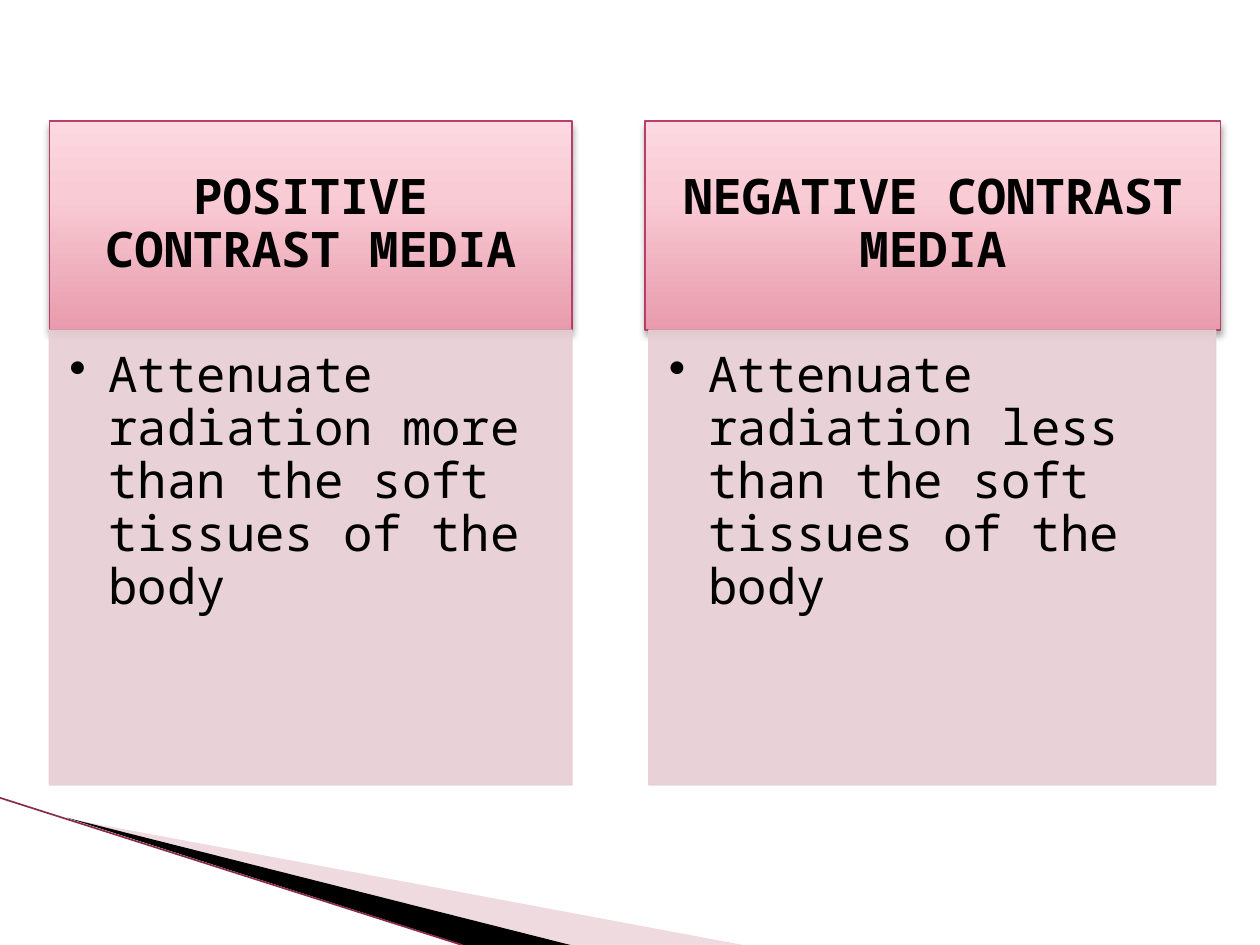
from dataclasses import dataclass

from lxml.etree import SubElement
from pptx import Presentation
from pptx.dml.color import RGBColor
from pptx.enum.shapes import MSO_CONNECTOR as Connector, MSO_SHAPE as Preset
from pptx.enum.text import MSO_ANCHOR as Anchor, PP_ALIGN as Align
from pptx.oxml import parse_xml
from pptx.oxml.ns import nsdecls, qn
from pptx.util import Pt


@dataclass(frozen=True)
class Theme:
    font: str = "Noto Sans Mono"
    text_size: float = 28
    line_spacing: float = 0.9
    bullet_indent: float = 22.5
    ink: str = "000000"
    header_line: str = "B83D68"
    header_stops: tuple = ((0, "E89BAD"), (65, "F9CCD5"), (100, "FDD8E0"))
    body: str = "E6CED4"
    body_opacity: int = 90
    pale_wedge: str = "D8A3AF"
    pale_opacity: int = 40
    edge: str = "8A2A4C"


@dataclass(frozen=True)
class Box:
    left: float
    top: float
    width: float
    height: float


@dataclass(frozen=True)
class Column:
    title: str
    statement: str
    header: Box
    body: Box


@dataclass(frozen=True)
class Wedge:
    points: tuple
    color: str
    opacity: int = 100


THEME = Theme()
HEADER_TOP, HEADER_HEIGHT = 69.1, 119.5
BODY_TOP, BODY_HEIGHT = HEADER_TOP + HEADER_HEIGHT, 260

COLUMNS = (
    Column(
        "POSITIVE CONTRAST MEDIA",
        "Attenuate radiation more than the soft tissues of the body",
        Box(28.1, HEADER_TOP, 298.8, HEADER_HEIGHT),
        Box(28.1, BODY_TOP, 298.8, BODY_HEIGHT),
    ),
    Column(
        "NEGATIVE CONTRAST MEDIA",
        "Attenuate radiation less than the soft tissues of the body",
        Box(368.6, HEADER_TOP, 329, HEADER_HEIGHT),
        Box(370.8, BODY_TOP, 324, BODY_HEIGHT),
    ),
)

WEDGES = (
    Wedge(((39.6, 468), (424.6, 540), (326, 540)), THEME.pale_wedge, THEME.pale_opacity),
    Wedge(((38.2, 467.3), (326, 540), (265, 540)), THEME.ink),
)


def set_opacity(fill, percent: int) -> None:
    """Make a solid fill partly transparent."""
    if percent < 100:
        color = fill._xPr.find(qn("a:solidFill"))[0]
        SubElement(color, qn("a:alpha"), val=str(percent * 1000))


def paint(fill, color: str, opacity: int = 100) -> None:
    """Give a fill one colour and opacity."""
    fill.solid()
    fill.fore_color.rgb = RGBColor.from_string(color)
    set_opacity(fill, opacity)


def add_wedge(slide, wedge: Wedge) -> None:
    """Draw one sliver of the corner decoration."""
    (left, top), *others = wedge.points
    builder = slide.shapes.build_freeform(Pt(left), Pt(top))
    builder.add_line_segments([(Pt(x), Pt(y)) for x, y in others], close=True)
    shape = builder.convert_to_shape()
    shape.shadow.inherit = False
    paint(shape.fill, wedge.color, wedge.opacity)
    shape.line.fill.background()


def add_edge(slide) -> None:
    """Draw the thin line along the corner decoration."""
    edge = slide.shapes.add_connector(Connector.STRAIGHT, Pt(0), Pt(455.9), Pt(264), Pt(540))
    edge.line.color.rgb = RGBColor.from_string(THEME.edge)
    edge.line.width = Pt(0.95)
    SubElement(edge._element.spPr, qn("a:effectLst"))


def add_rectangle(slide, box: Box, insets: tuple):
    """Add a rectangle with text insets given as left, top, right, bottom."""
    shape = slide.shapes.add_shape(
        Preset.RECTANGLE, Pt(box.left), Pt(box.top), Pt(box.width), Pt(box.height)
    )
    shape.shadow.inherit = False
    shape.line.width = Pt(0.75)
    frame = shape.text_frame
    frame.word_wrap = True
    frame.margin_left, frame.margin_top, frame.margin_right, frame.margin_bottom = map(Pt, insets)
    return shape


def write(paragraph, text: str, align, bold: bool = False) -> None:
    """Add one styled run to a paragraph."""
    paragraph.alignment = align
    paragraph.line_spacing = THEME.line_spacing
    run = paragraph.add_run()
    run.text = text
    run.font.name = THEME.font
    run.font.size = Pt(THEME.text_size)
    run.font.bold = bold
    run.font.color.rgb = RGBColor.from_string(THEME.ink)


def add_header(slide, column: Column) -> None:
    """Draw the shaded heading of a column."""
    shape = add_rectangle(slide, column.header, (15.8, 8.6, 15.8, 8.6))
    shape.line.color.rgb = RGBColor.from_string(THEME.header_line)
    stops = "".join(
        f'<a:gs pos="{position * 1000}"><a:srgbClr val="{color}"/></a:gs>'
        for position, color in THEME.header_stops
    )
    properties = shape._element.spPr
    properties.find(qn("a:prstGeom")).addnext(parse_xml(
        f'<a:gradFill {nsdecls("a")} rotWithShape="1"><a:gsLst>{stops}</a:gsLst>'
        '<a:lin ang="16200000" scaled="0"/></a:gradFill>'
    ))
    properties.find(qn("a:effectLst")).append(parse_xml(
        f'<a:outerShdw {nsdecls("a")} blurRad="{Pt(4)}" dist="{Pt(3)}" dir="5400000" '
        f'rotWithShape="0"><a:srgbClr val="{THEME.ink}"><a:alpha val="35000"/></a:srgbClr>'
        '</a:outerShdw>'
    ))
    shape.text_frame.vertical_anchor = Anchor.MIDDLE
    write(shape.text_frame.paragraphs[0], column.title, Align.CENTER, bold=True)


def add_body(slide, column: Column) -> None:
    """Draw the bulleted panel of a column."""
    shape = add_rectangle(slide, column.body, (11.5, 11.5, 15.8, 17.3))
    paint(shape.fill, THEME.body, THEME.body_opacity)
    paint(shape.line.fill, THEME.body, THEME.body_opacity)
    shape.text_frame.vertical_anchor = Anchor.TOP
    paragraph = shape.text_frame.paragraphs[0]
    properties = paragraph._p.get_or_add_pPr()
    properties.set("marL", str(Pt(THEME.bullet_indent)))
    properties.set("indent", str(-Pt(THEME.bullet_indent)))
    SubElement(properties, qn("a:buChar"), char="•")
    write(paragraph, column.statement, Align.LEFT)


def main() -> None:
    """Build and save the slide."""
    presentation = Presentation()
    presentation.slide_width, presentation.slide_height = Pt(720), Pt(540)
    slide = presentation.slides.add_slide(presentation.slide_layouts[6])
    for wedge in WEDGES:
        add_wedge(slide, wedge)
    add_edge(slide)
    for column in COLUMNS:
        add_header(slide, column)
        add_body(slide, column)
    presentation.save("out.pptx")


if __name__ == "__main__":
    main()
